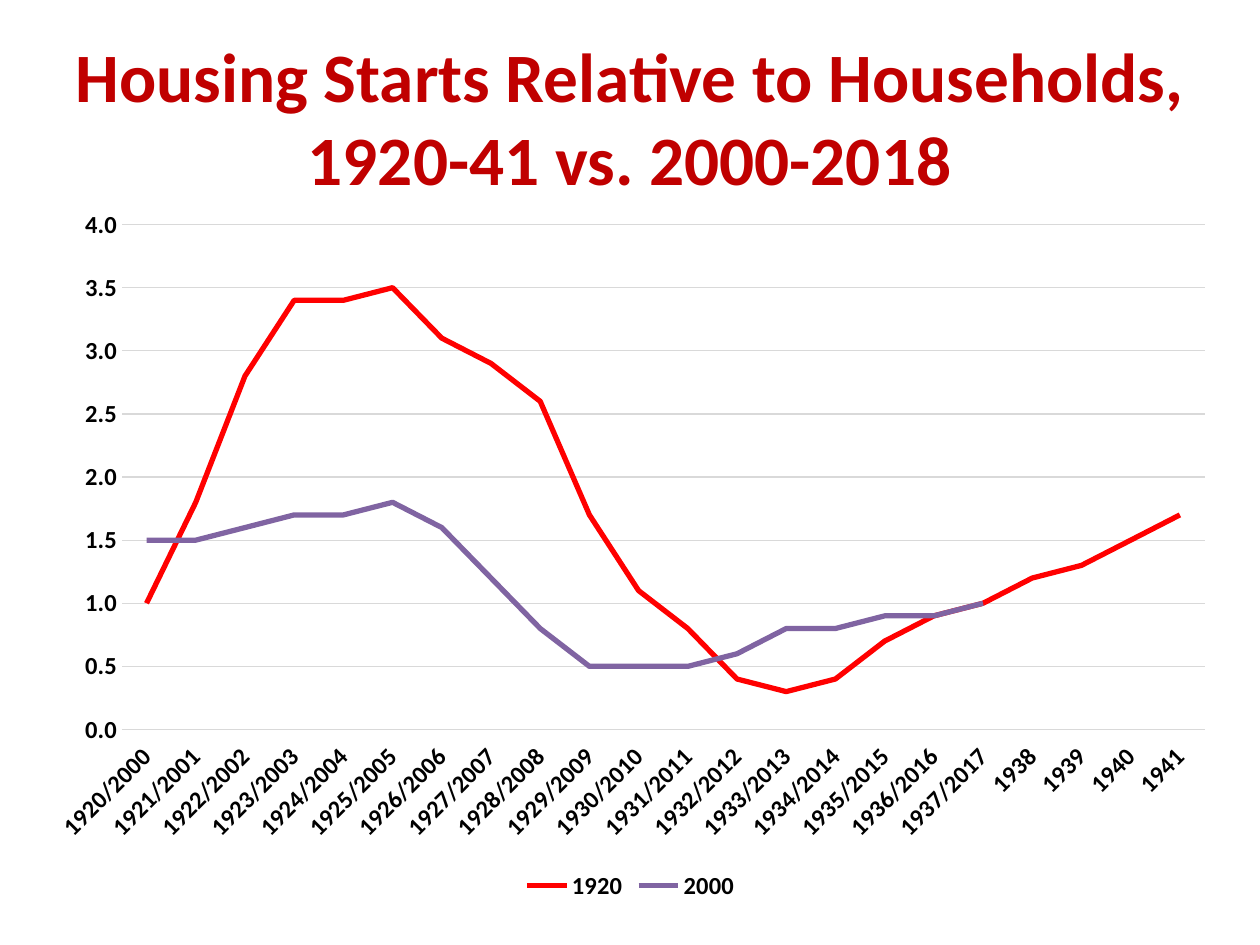
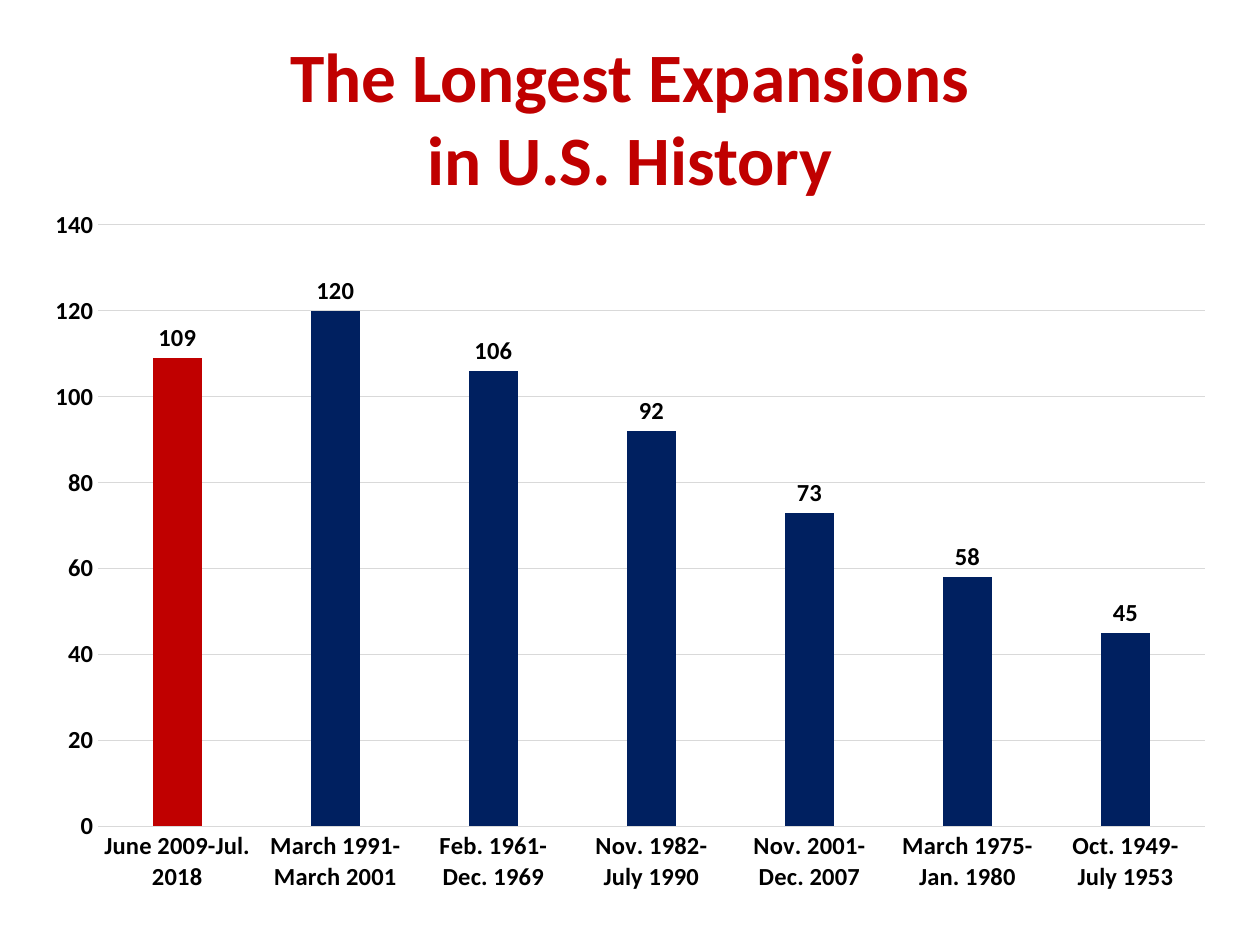
from dataclasses import dataclass

from pptx import Presentation
from pptx import util as u
from pptx.chart.data import CategoryChartData
from pptx.dml.color import RGBColor
from pptx.enum import chart as charts, text

Pt = u.Pt


@dataclass(frozen=True)
class Theme:
    font: str = "Calibri"
    title: str = "C00000"
    ink: str = "000000"
    grid: str = "D9D9D9"
    boom: str = "FF0000"
    recent: str = "8064A2"
    bar: str = "002060"
    title_size: float = 39.6
    label_size: float = 14
    grid_width: float = 0.75
    line_width: float = 3


@dataclass(frozen=True)
class Series:
    name: str
    values: list
    color: str


@dataclass(frozen=True)
class ChartSlide:
    title: str
    kind: int
    left: float
    width: float
    categories: list
    series: list
    top_value: float
    step: float
    number_format: str


THEME = Theme()

# Content
years = [f"{1920 + i}/{2000 + i}" for i in range(18)] + [str(y) for y in range(1938, 1942)]
HOUSING = ChartSlide(
    "Housing Starts Relative to Households, 1920-41 vs. 2000-2018",
    charts.XL_CHART_TYPE.LINE, 18.72, 683.28, years,
    [
        Series("1920", [1, 1.8, 2.8, 3.4, 3.4, 3.5, 3.1, 2.9, 2.6, 1.7, 1.1, 0.8,
                        0.4, 0.3, 0.4, 0.7, 0.9, 1, 1.2, 1.3, 1.5, 1.7], THEME.boom),
        Series("2000", [1.5, 1.5, 1.6, 1.7, 1.7, 1.8, 1.6, 1.2, 0.8, 0.5, 0.5, 0.5,
                        0.6, 0.8, 0.8, 0.9, 0.9, 1] + [None] * 4, THEME.recent),
    ],
    4, 0.5, "0.0")
EXPANSIONS = ChartSlide(
    "The Longest Expansions\vin U.S. History",
    charts.XL_CHART_TYPE.COLUMN_CLUSTERED, 18, 684,
    ["June 2009-Jul. 2018", "March 1991-\nMarch 2001", "Feb. 1961-\nDec. 1969",
     "Nov. 1982-\nJuly 1990", "Nov. 2001-\nDec. 2007", "March 1975-\nJan. 1980",
     "Oct. 1949-\nJuly 1953"],
    [Series("Series 1", [109, 120, 106, 92, 73, 58, 45], THEME.bar)],
    140, 20, "General")


# Shared styling
def rgb(color: str) -> RGBColor:
    return RGBColor.from_string(color)


def style_font(font, size: float, color: str = THEME.ink) -> None:
    font.name, font.size, font.bold = THEME.font, Pt(size), True
    font.color.rgb = rgb(color)


def style_line(line, color: str, width: float) -> None:
    line.color.rgb = rgb(color)
    line.width = Pt(width)


def add_title(page, title: str) -> None:
    box = page.shapes.add_textbox(Pt(36), Pt(21.6), Pt(648), Pt(90))
    frame = box.text_frame
    frame.word_wrap = True
    frame.margin_left = frame.margin_right = 0
    frame.vertical_anchor = text.MSO_ANCHOR.MIDDLE
    para = frame.paragraphs[0]
    para.text = title
    para.alignment = text.PP_ALIGN.CENTER
    style_font(para.font, THEME.title_size, THEME.title)


def style_axes(chart, content: ChartSlide) -> None:
    for axis in (chart.category_axis, chart.value_axis):
        axis.major_tick_mark = axis.minor_tick_mark = charts.XL_TICK_MARK.NONE
        style_font(axis.tick_labels.font, THEME.label_size)
    style_line(chart.category_axis.format.line, THEME.grid, THEME.grid_width)
    values = chart.value_axis
    values.minimum_scale, values.maximum_scale = 0, content.top_value
    values.major_unit = content.step
    values.format.line.fill.background()
    values.has_major_gridlines = True
    style_line(values.major_gridlines.format.line, THEME.grid, THEME.grid_width)
    values.tick_labels.number_format = content.number_format
    values.tick_labels.number_format_is_linked = False


def add_chart_slide(deck, content: ChartSlide):
    page = deck.slides.add_slide(deck.slide_layouts[6])
    add_title(page, content.title)
    data = CategoryChartData()
    data.categories = content.categories
    for series in content.series:
        data.add_series(series.name, series.values)
    chart = page.shapes.add_chart(content.kind, Pt(content.left), Pt(111.6),
                                  Pt(content.width), Pt(406.08), data).chart
    chart.has_title = chart.has_legend = False
    chart.font.name, chart.font.size = THEME.font, Pt(10)
    chart.plots[0].vary_by_categories = False
    style_axes(chart, content)
    return chart


# Slide 1: housing starts as two lines
def build_housing(deck) -> None:
    chart = add_chart_slide(deck, HOUSING)
    for line, series in zip(chart.plots[0].series, HOUSING.series):
        line.smooth = False
        line.marker.style = charts.XL_MARKER_STYLE.NONE
        style_line(line.format.line, series.color, THEME.line_width)
    years_axis = chart.category_axis
    years_axis.tick_label_position = charts.XL_TICK_LABEL_POSITION.LOW
    # Slant the year labels by 45 degrees
    years_axis._element.txPr.bodyPr.set("rot", "-2700000")
    chart.has_legend = True
    chart.legend.position = charts.XL_LEGEND_POSITION.BOTTOM
    chart.legend.include_in_layout = False
    style_font(chart.legend.font, THEME.label_size)


# Slide 2: expansions as columns, the current one highlighted
def build_expansions(deck) -> None:
    plot = add_chart_slide(deck, EXPANSIONS).plots[0]
    plot.gap_width, plot.overlap = 219, -27
    columns = plot.series[0]
    current = columns.points[0]
    for column, color in ((columns, THEME.bar), (current, THEME.title)):
        column.format.fill.solid()
        column.format.fill.fore_color.rgb = rgb(color)
    labels = columns.data_labels
    labels.show_value = True
    labels.position = charts.XL_LABEL_POSITION.OUTSIDE_END
    style_font(labels.font, THEME.label_size)


def main() -> None:
    deck = Presentation()
    deck.slide_width, deck.slide_height = Pt(720), Pt(540)
    build_housing(deck)
    build_expansions(deck)
    deck.save("out.pptx")


if __name__ == "__main__":
    main()
